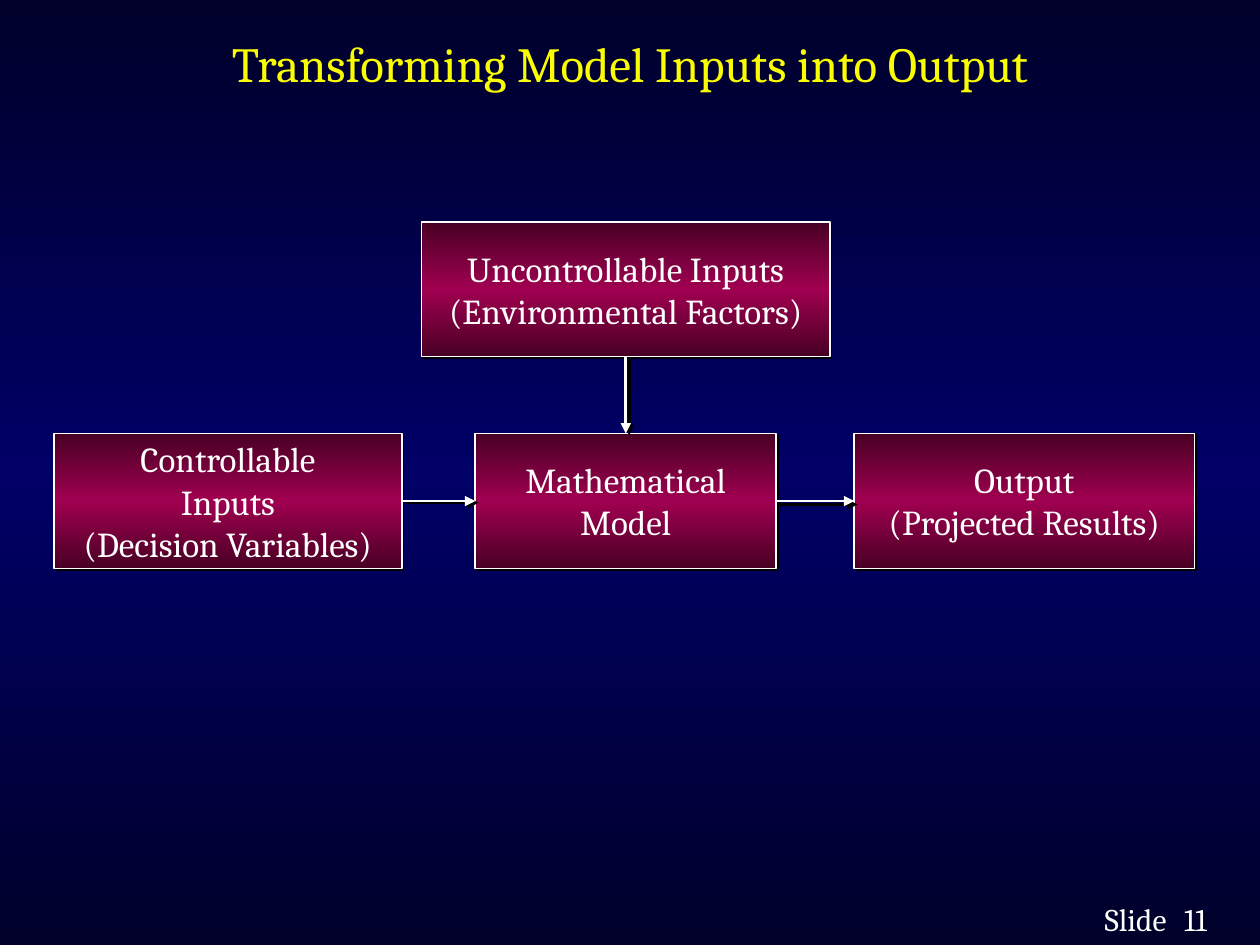
from copy import deepcopy

from lxml import etree
from pptx import Presentation
from pptx import util as u
from pptx.dml.color import RGBColor
from pptx.enum import shapes, text
from pptx.oxml.ns import qn

COLORS = {
    "night": "00002B", "navy": "000066", "wine": "480024", "crimson": "A00050",
    "title": "FAFD00", "white": "FFFFFF", "shadow": "000000",
}
FONT = "Cambria"
TITLE = "Transforming Model Inputs into Output"
FOOTER = [("Slide", 22.02, 2.0), ("11", 23.62, 1.2)]
BOX_HEIGHT = 2.72
BOXES = {
    "uncontrollable": (["Uncontrollable Inputs", "(Environmental Factors)"], 8.5, 4.47, 8.23),
    "controllable": (["Controllable", "Inputs", "(Decision Variables)"], 1.09, 8.74, 7.01),
    "output": (["Output", "(Projected Results)"], 17.22, 8.74, 6.86),
    "model": (["Mathematical", "Model"], 9.58, 8.74, 6.07),
}
TOP, LEFT, BOTTOM, RIGHT = range(4)
ARROWS = [
    ("controllable", RIGHT, "model", LEFT, 2.2, 27),
    ("model", RIGHT, "output", LEFT, 2.8, 45),
    ("uncontrollable", BOTTOM, "model", TOP, 2.2, 27),
]


def rgb(name):
    return RGBColor.from_string(COLORS[name])


def write(frame, lines, size=20, color="white", align=text.PP_ALIGN.CENTER,
          anchor=text.MSO_ANCHOR.MIDDLE, wrap=False):
    frame.text = "\n".join(lines)
    frame.word_wrap = wrap
    frame.vertical_anchor = anchor
    for paragraph in frame.paragraphs:
        paragraph.alignment = align
        font = paragraph.runs[0].font
        font.name, font.size, font.color.rgb = FONT, u.Pt(size), rgb(color)


def blend(fill, element, edge, middle):
    fill.gradient()
    fill.gradient_angle = 90
    first = next(element.iter(qn("a:gs")))
    first.addnext(deepcopy(first))
    for stop, position, color in zip(fill.gradient_stops, (0, 0.5, 1), (edge, middle, edge)):
        stop.position = position
        stop.color.rgb = rgb(color)


def cast_shadow(properties, distance, angle):
    effects = etree.SubElement(properties, qn("a:effectLst"))
    shadow = etree.SubElement(effects, qn("a:outerShdw"), dist=str(u.Pt(distance)),
                              dir=str(angle * 60000), algn="ctr", rotWithShape="0")
    etree.SubElement(shadow, qn("a:srgbClr"), val=COLORS["shadow"])


def add_box(slide, lines, left, top, width):
    box = slide.shapes.add_shape(shapes.MSO_SHAPE.RECTANGLE, u.Cm(left), u.Cm(top),
                                 u.Cm(width), u.Cm(BOX_HEIGHT))
    blend(box.fill, box.element, "wine", "crimson")
    box.line.color.rgb, box.line.width = rgb("white"), u.Pt(1)
    cast_shadow(box.element.spPr, 1.4, 45)
    write(box.text_frame, lines)
    return box


def add_arrow(slide, source, source_side, target, target_side, distance, angle):
    arrow = slide.shapes.add_connector(shapes.MSO_CONNECTOR.STRAIGHT, 0, 0, 0, 0)
    arrow.begin_connect(source, source_side)
    arrow.end_connect(target, target_side)
    arrow.line.color.rgb, arrow.line.width = rgb("white"), u.Pt(1.5)
    etree.SubElement(arrow.line._get_or_add_ln(), qn("a:tailEnd"), type="triangle")
    cast_shadow(arrow._element.spPr, distance, angle)


def main():
    deck = Presentation()
    deck.slide_width, deck.slide_height = u.Cm(25.4), u.Cm(19.05)
    slide = deck.slides.add_slide(deck.slide_layouts[5])
    blend(slide.background.fill, slide.element, "night", "navy")

    title = slide.shapes.title
    title.left, title.top, title.width, title.height = map(u.Cm, (1.47, 0.13, 22.45, 2.26))
    write(title.text_frame, [TITLE], size=28, color="title", wrap=True)

    for label, left, width in FOOTER:
        footer = slide.shapes.add_textbox(u.Cm(left), u.Cm(18.01), u.Cm(width), u.Cm(1.02))
        write(footer.text_frame, [label], size=18, align=text.PP_ALIGN.LEFT,
              anchor=text.MSO_ANCHOR.TOP, wrap=True)

    boxes = {key: add_box(slide, *content) for key, content in BOXES.items()}
    for source, source_side, target, target_side, distance, angle in ARROWS:
        add_arrow(slide, boxes[source], source_side, boxes[target], target_side, distance, angle)

    deck.save("out.pptx")


if __name__ == "__main__":
    main()
